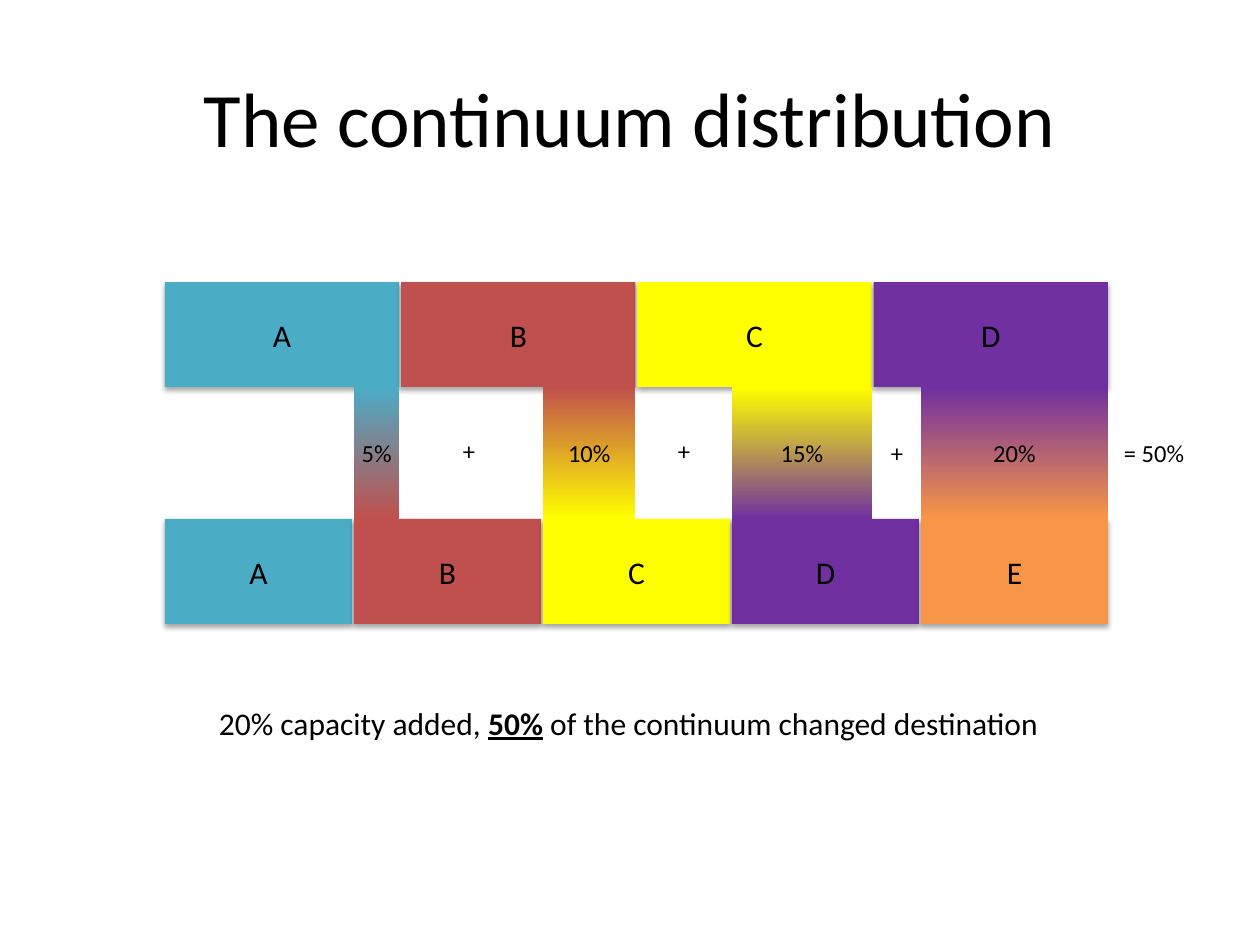
from lxml import etree
from pptx import Presentation
from pptx import util as u
from pptx.dml.color import RGBColor
from pptx.enum import shapes, text
from pptx.oxml.ns import qn

TITLE = "The continuum distribution"
COLORS = {"A": "4BACC6", "B": "C0504D", "C": "FFFF00", "D": "7030A0",
          "E": "F79646", "text": "000000", "shadow": "000000"}
BEFORE, AFTER = "ABCD", "ABCDE"
SHIFTS = ["5%", "10%", "15%", "20%"]
SIGNS = [("+", 457, 430, 25), ("+", 672, 430, 25),
         ("+", 885, 432, 25), ("= 50%", 1118, 432, 73)]
NOTE = [("20% capacity added, ", {}),
        ("50%", {"bold": True, "underline": True}),
        (" of the continuum changed destination", {})]

LEFT, SPAN, GAP, BLOCK_H = 165, 943, 2, 105
TOP_Y, BOTTOM_Y = 282, 519
FRAME = {"margin_left": 6, "margin_top": 6, "margin_right": 6, "margin_bottom": 6}


def px(n):
    return u.Emu(round(n * 914400 / 126))


def rgb(name):
    return RGBColor.from_string(COLORS[name])


def write(sp, runs, size, align, anchor, wrap=True):
    tf = sp.text_frame
    for name, value in FRAME.items():
        setattr(tf, name, px(value))
    tf.word_wrap, tf.vertical_anchor = wrap, anchor
    p = tf.paragraphs[0]
    p.alignment = align
    for words, look in runs:
        r = p.add_run()
        r.text = words
        r.font.color.rgb = rgb("text")
        for name, value in {"name": "Calibri", "size": u.Pt(size), **look}.items():
            setattr(r.font, name, value)


def add_rect(parent, label, x, y, w, h, size):
    sp = parent.add_shape(shapes.MSO_SHAPE.RECTANGLE, px(x), px(y), px(w), px(h))
    sp.shadow.inherit = False
    sp.line.fill.background()
    write(sp, [(label, {})], size, text.PP_ALIGN.CENTER, text.MSO_ANCHOR.MIDDLE)
    return sp


def add_row(parent, names, y):
    pitch = (SPAN + GAP) / len(names)
    spans = []
    for i, name in enumerate(names):
        x = LEFT + i * pitch
        sp = add_rect(parent, name, x, y, pitch - GAP, BLOCK_H, 18)
        sp.fill.solid()
        sp.fill.fore_color.rgb = rgb(name)
        effects = sp._element.spPr.find(qn("a:effectLst"))
        shadow = etree.SubElement(effects, qn("a:outerShdw"), blurRad="38100",
                                  dist="23000", dir="5400000", rotWithShape="0")
        color = etree.SubElement(shadow, qn("a:srgbClr"), val=COLORS["shadow"])
        etree.SubElement(color, qn("a:alpha"), val="35000")
        spans.append((x, x + pitch - GAP))
    return spans


def add_label(parent, runs, x, y, w, h, size):
    sp = parent.add_textbox(px(x), px(y), px(w), px(h))
    write(sp, runs, size, text.PP_ALIGN.LEFT, text.MSO_ANCHOR.TOP, False)
    sp.text_frame.auto_size = text.MSO_AUTO_SIZE.SHAPE_TO_FIT_TEXT


prs = Presentation()
prs.slide_width, prs.slide_height = px(1260), px(945)
s = prs.slides.add_slide(prs.slide_layouts[5])

title = s.shapes.title
for name, value in {"left": 63, "top": 38, "width": 1134, "height": 157}.items():
    setattr(title, name, px(value))
write(title, [(TITLE, {})], 44, text.PP_ALIGN.CENTER, text.MSO_ANCHOR.MIDDLE)

before = add_row(s.shapes, BEFORE, TOP_Y)
add_label(s.shapes, NOTE, 213, 698, 844, 50, 18)
after = add_row(s.shapes.add_group_shape().shapes, AFTER, BOTTOM_Y)

band_y = TOP_Y + BLOCK_H
for i, label in enumerate(SHIFTS):
    x, right = after[i + 1][0], before[i][1]
    sp = add_rect(s.shapes, label, x, band_y, right - x, BOTTOM_Y - band_y, 14)
    sp.fill.gradient()
    sp.fill.gradient_angle = 270
    for stop, name in zip(sp.fill.gradient_stops, (BEFORE[i], AFTER[i + 1])):
        stop.color.rgb = rgb(name)

for sign, x, y, w in SIGNS:
    add_label(s.shapes, [(sign, {})], x, y, w, 42, 14)

prs.save("out.pptx")
